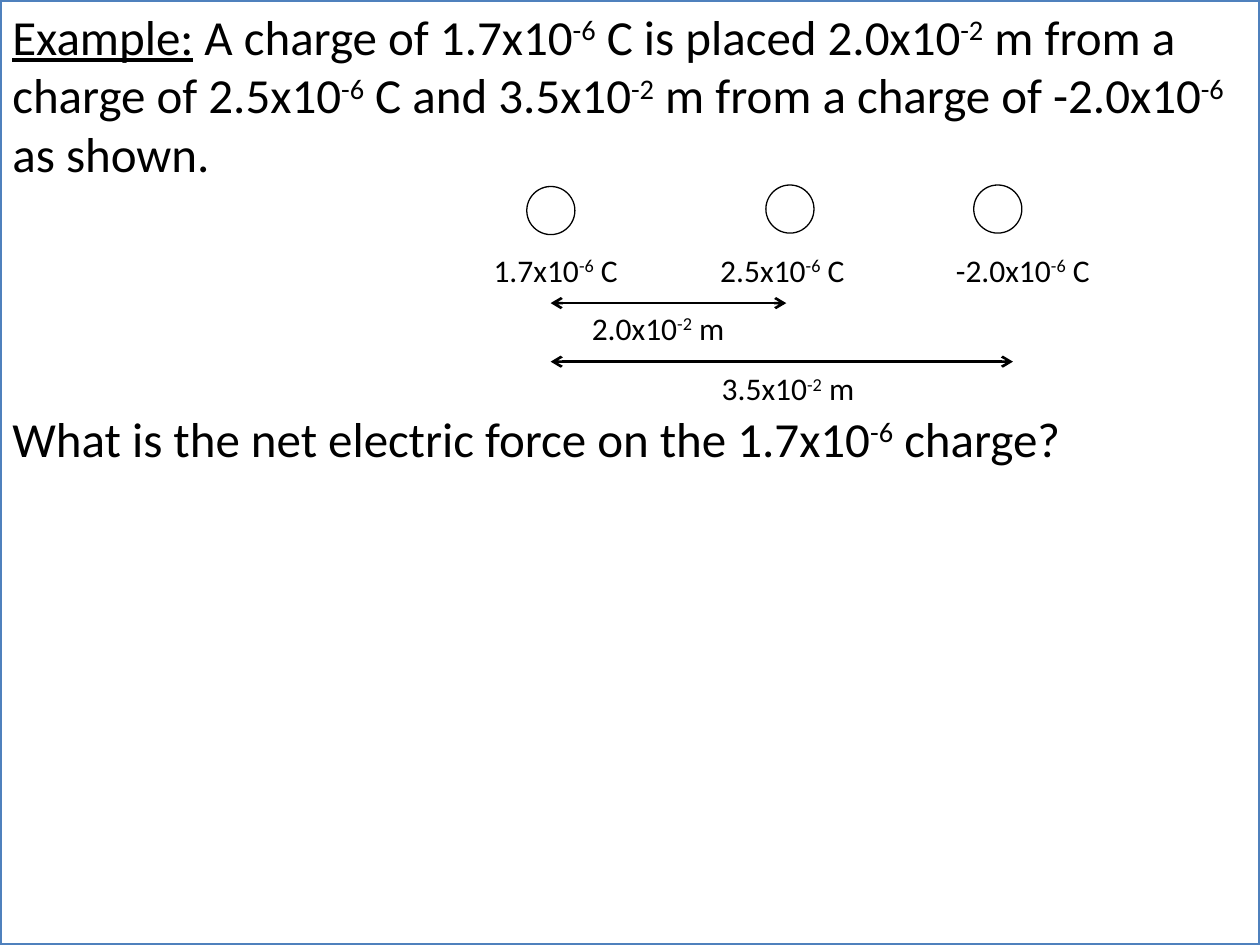
from lxml import etree
from pptx import Presentation
from pptx import util as u
from pptx.dml.color import RGBColor
from pptx.enum import shapes, text
from pptx.oxml.ns import qn

THEME = {
    "font": "Calibri",
    "ink": RGBColor(0, 0, 0),
    "paper": RGBColor(255, 255, 255),
    "border": RGBColor(0x4F, 0x81, 0xBD),
    "body": 28,
    "label": 18,
}

EXAMPLE = [
    ("Example:", "underline"), (" A charge of 1.7x10", ""), ("-6", "super"),
    (" C is placed 2.0x10", ""), ("-2", "super"),
    (" m from a charge of 2.5x10", ""), ("-6", "super"),
    (" C and 3.5x10", ""), ("-2", "super"),
    (" m from a charge of -2.0x10", ""), ("-6", "super"), (" as shown.", ""),
]
QUESTION = [
    ("What is the net electric force on the 1.7x10", ""), ("-6", "super"),
    (" charge?", ""),
]
# circle left, circle top, label left, label width, mantissa
CHARGES = [
    (10.62, 3.76, 9.7, 3.1, "1.7x10"),
    (15.44, 3.73, 14.27, 3.1, "2.5x10"),
    (19.63, 3.73, 19.02, 3.28, "-2.0x10"),
]
# arrow end, arrow height, label left, label top, mantissa
DISTANCES = [
    (15.85, 6.11, 11.68, 6.1, "2.0x10"),
    (20.42, 7.29, 14.3, 7.32, "3.5x10"),
]
DIAMETER = 0.97
ARROW_START = 11.1
LABEL_TOP, LABEL_HEIGHT, DISTANCE_WIDTH = 4.93, 1.02, 3.25


def add_runs(p, runs, size):
    for words, style in runs:
        r = p.add_run()
        r.text = words
        r.font.name = THEME["font"]
        r.font.size = u.Pt(size)
        r.font.color.rgb = THEME["ink"]
        if style == "underline":
            r.font.underline = True
        elif style == "super":
            r.font._element.set("baseline", "30000")


def add_box(parent, kind, left, top, width, height, line, weight):
    sp = parent.add_shape(kind, u.Cm(left), u.Cm(top), u.Cm(width), u.Cm(height))
    sp.shadow.inherit = False
    sp.fill.solid()
    sp.fill.fore_color.rgb = THEME["paper"]
    sp.line.color.rgb = line
    sp.line.width = u.Pt(weight)
    return sp


def add_label(parent, left, top, width, mantissa, exponent, unit):
    sp = parent.add_textbox(u.Cm(left), u.Cm(top), u.Cm(width), u.Cm(LABEL_HEIGHT))
    tf = sp.text_frame
    tf.word_wrap = False
    tf.auto_size = text.MSO_AUTO_SIZE.SHAPE_TO_FIT_TEXT
    runs = [(mantissa, ""), (exponent, "super"), (" " + unit, "")]
    add_runs(tf.paragraphs[0], runs, THEME["label"])


def add_double_arrow(parent, start, end, y):
    line = parent.add_connector(
        shapes.MSO_CONNECTOR.STRAIGHT, u.Cm(start), u.Cm(y), u.Cm(end), u.Cm(y))
    line.line.color.rgb = THEME["ink"]
    line.line.width = u.Pt(1.5)
    ln = line.line._get_or_add_ln()
    for tag in ("a:headEnd", "a:tailEnd"):
        etree.SubElement(ln, qn(tag), type="arrow")
    etree.SubElement(line._element.spPr, qn("a:effectLst"))


def add_problem(s):
    sp = add_box(s.shapes, shapes.MSO_SHAPE.RECTANGLE, 0, 0, 25.4, 19.05,
                 THEME["border"], 2)
    tf = sp.text_frame
    tf.word_wrap = True
    tf.vertical_anchor = text.MSO_ANCHOR.TOP
    for p, runs, before in (
        (tf.paragraphs[0], EXAMPLE, 0),
        (tf.add_paragraph(), QUESTION, 119),
    ):
        p.alignment = text.PP_ALIGN.LEFT
        p.space_before = u.Pt(before)
        p.space_after = u.Pt(10)
        add_runs(p, runs, THEME["body"])


def add_diagram(s):
    diagram = s.shapes.add_group_shape().shapes
    for left, top, label_left, width, mantissa in CHARGES:
        add_box(diagram, shapes.MSO_SHAPE.OVAL, left, top, DIAMETER, DIAMETER,
                THEME["ink"], 0.75)
        add_label(diagram, label_left, LABEL_TOP, width, mantissa, "-6", "C")
    for end, y, label_left, label_top, mantissa in DISTANCES:
        add_label(diagram, label_left, label_top, DISTANCE_WIDTH, mantissa, "-2", "m")
        add_double_arrow(diagram, ARROW_START, end, y)


def main():
    prs = Presentation()
    prs.slide_width, prs.slide_height = u.Cm(25.4), u.Cm(19.05)
    s = prs.slides.add_slide(prs.slide_layouts[6])
    add_problem(s)
    add_diagram(s)
    prs.save("out.pptx")


if __name__ == "__main__":
    main()
